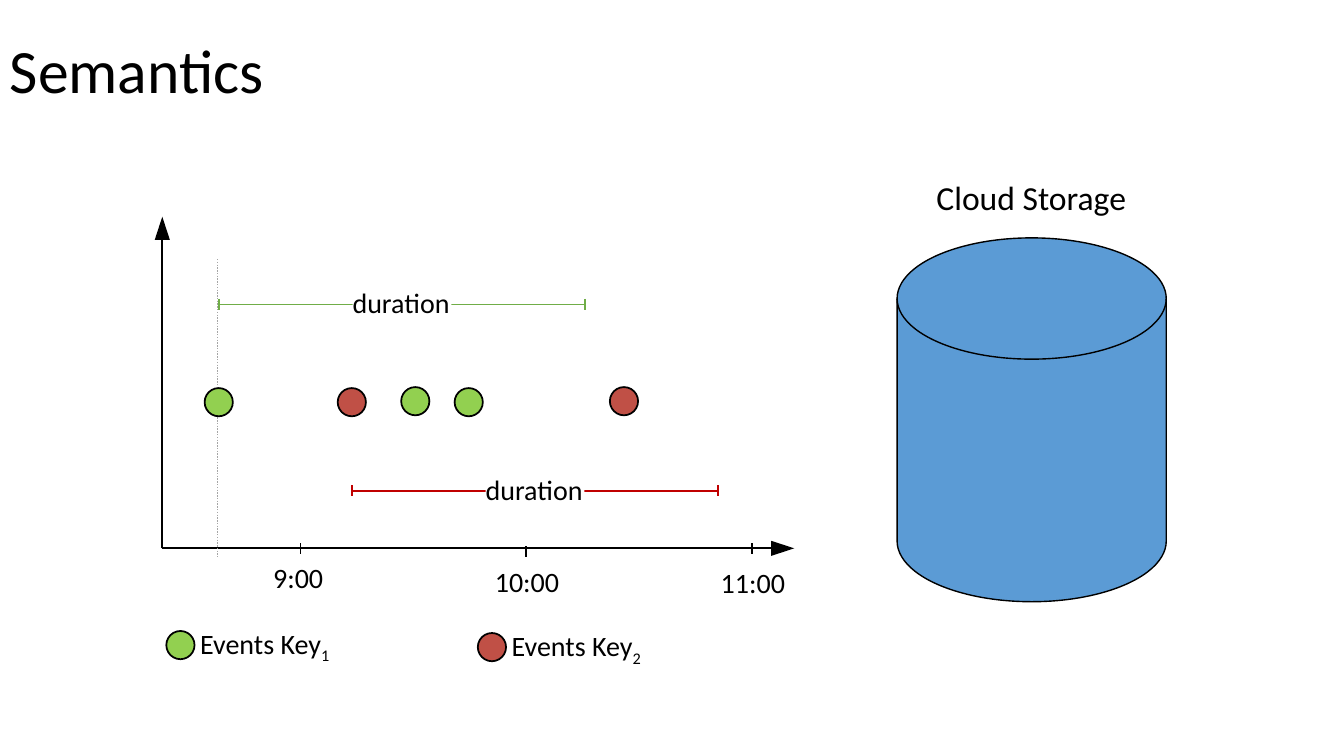
from dataclasses import dataclass

from lxml import etree
from pptx import Presentation
from pptx import util as u
from pptx.dml.color import RGBColor
from pptx.enum import dml, shapes, text
from pptx.oxml.ns import qn

CELL = 0.1  # inches per grid column and row
COLUMNS, ROWS = 133.33, 75


@dataclass(frozen=True)
class Theme:
    font: str = "Calibri"
    title: int = 44
    heading: int = 24
    body: int = 20
    ink: str = "000000"
    paper: str = "FFFFFF"
    storage: str = "5B9BD5"
    key_1: str = "92D050"
    key_2: str = "C05046"
    span_1: str = "70AD47"
    span_2: str = "C00000"
    guide: str = "A5A5A5"
    thin: float = 1
    stroke: float = 1.25


def grid(*cells):
    return [u.Inches(cell * CELL) for cell in cells]


class Canvas:
    def __init__(self, slide, theme):
        self.slide, self.theme = slide, theme

    def paint(self, shape, fill, line_width=0):
        shape.shadow.inherit = False
        shape.fill.solid()
        shape.fill.fore_color.rgb = RGBColor.from_string(fill)
        if line_width:
            shape.line.color.rgb = RGBColor.from_string(self.theme.ink)
            shape.line.width = u.Pt(line_width)
        else:
            shape.line.fill.background()
        return shape

    def preset(self, kind, left, top, width, height, fill, line_width=0):
        shape = self.slide.shapes.add_shape(kind, *grid(left, top, width, height))
        return self.paint(shape, fill, line_width)

    def set_words(self, box, words, size, subscript="", inset=0, wrap=False,
                  align=text.PP_ALIGN.LEFT, anchor=text.MSO_ANCHOR.TOP):
        frame = box.text_frame
        frame.word_wrap = wrap
        frame.vertical_anchor = anchor
        frame.margin_left = frame.margin_right = u.Inches(inset)
        frame.margin_top = frame.margin_bottom = u.Inches(inset / 2)
        frame.text = words
        para = frame.paragraphs[0]
        para.alignment = align
        if subscript:
            lowered = para.add_run()
            lowered.text = subscript
            lowered.font._element.set("baseline", "-25000")
        for run in para.runs:
            run.font.name = self.theme.font
            run.font.size = u.Pt(size)
            run.font.color.rgb = RGBColor.from_string(self.theme.ink)
        return para

    def label(self, left, top, width, height, words, size, **style):
        box = self.slide.shapes.add_textbox(*grid(left, top, width, height))
        return self.set_words(box, words, size, **style)

    def line(self, x1, y1, x2, y2, color, width=None, dash=None):
        connector = self.slide.shapes.add_connector(
            shapes.MSO_CONNECTOR.STRAIGHT, *grid(x1, y1, x2, y2))
        connector.line.color.rgb = RGBColor.from_string(color)
        connector.line.width = u.Pt(width or self.theme.stroke)
        if dash:
            connector.line.dash_style = dash
        etree.SubElement(connector._element.spPr, qn("a:effectLst"))

    def axis(self, x1, y1, x2, y2):
        """Draw a horizontal or vertical axis with a solid head at its far end."""
        length = abs(x2 - x1) + abs(y2 - y1)
        dx, dy = (x2 - x1) / length, (y2 - y1) / length
        head, half = 2.3, 0.75
        neck_x, neck_y = x2 - dx * head, y2 - dy * head
        self.line(x1, y1, neck_x, neck_y, self.theme.ink)
        builder = self.slide.shapes.build_freeform(*grid(x2, y2))
        corners = [grid(neck_x + dy * side, neck_y + dx * side)
                   for side in (half, -half)]
        builder.add_line_segments(corners, close=True)
        self.paint(builder.convert_to_shape(), self.theme.ink)

    def event(self, left, top, fill):
        self.preset(shapes.MSO_SHAPE.OVAL, left, top, 2.8, 2.8, fill, self.theme.stroke)

    def duration(self, start, y, color):
        """Draw a capped time span with its name in the middle."""
        length, cap, name_width = 36.35, 0.55, 9.8
        self.line(start, y, start + length, y, color)
        for x in (start, start + length):
            self.line(x, y - cap, x, y + cap, color)
        name = self.preset(shapes.MSO_SHAPE.RECTANGLE,
                           start + (length - name_width) / 2, y - 1.85,
                           name_width, 3.4, self.theme.paper)
        self.set_words(name, "duration", self.theme.body)

    def tick(self, x, top, label_left, label_top, hour):
        self.line(x, top, x, top + 1.1, self.theme.ink)
        self.label(label_left, label_top, 7, 4.2, hour, self.theme.body)


def main():
    deck = Presentation()
    deck.slide_width, deck.slide_height = grid(COLUMNS, ROWS)
    theme = Theme()
    page = Canvas(deck.slides.add_slide(deck.slide_layouts[6]), theme)

    title = page.label(0, 0, 115, 14.5, "Semantics", theme.title, inset=0.1,
                       wrap=True, anchor=text.MSO_ANCHOR.MIDDLE)
    title.line_spacing = 0.9

    page.preset(shapes.MSO_SHAPE.FLOWCHART_MAGNETIC_DISK, 89, 23.6, 26.7, 36.1,
                theme.storage, theme.thin)
    page.label(90.9, 17.1, 22.8, 5, "Cloud Storage", theme.heading, inset=0.1,
               wrap=True, align=text.PP_ALIGN.CENTER)

    origin = (16.1, 54.4)
    page.axis(*origin, 78.8, origin[1])
    page.axis(*origin, origin[0], 21.5)
    page.line(21.6, 25.7, 21.6, 55.2, theme.guide, theme.thin,
              dml.MSO_LINE.ROUND_DOT)

    first_hour, hour_step = 29.8, 22.4
    ticks = [(53.9, 27.1, 55.6, "9:00"), (54.2, 49.1, 56, "10:00"),
             (53.9, 71.5, 56.1, "11:00")]
    for index, tick in enumerate(ticks):
        page.tick(first_hour + index * hour_step, *tick)

    page.duration(21.7, 30.2, theme.span_1)
    page.duration(34.9, 48.7, theme.span_2)

    events = [(20.3, 38.5, theme.key_1), (33.5, 38.5, theme.key_2),
              (39.8, 38.4, theme.key_1), (45.1, 38.5, theme.key_1),
              (60.5, 38.4, theme.key_2)]
    for event in events:
        page.event(*event)

    legend = [(16.5, 62.6, theme.key_1, "1"), (47.4, 62.8, theme.key_2, "2")]
    for left, top, color, key in legend:
        page.event(left, top, color)
        page.label(left + 3.35, top - 0.4, 13.3, 3.4, "Events Key", theme.body,
                   subscript=key)

    deck.save("out.pptx")


if __name__ == "__main__":
    main()
